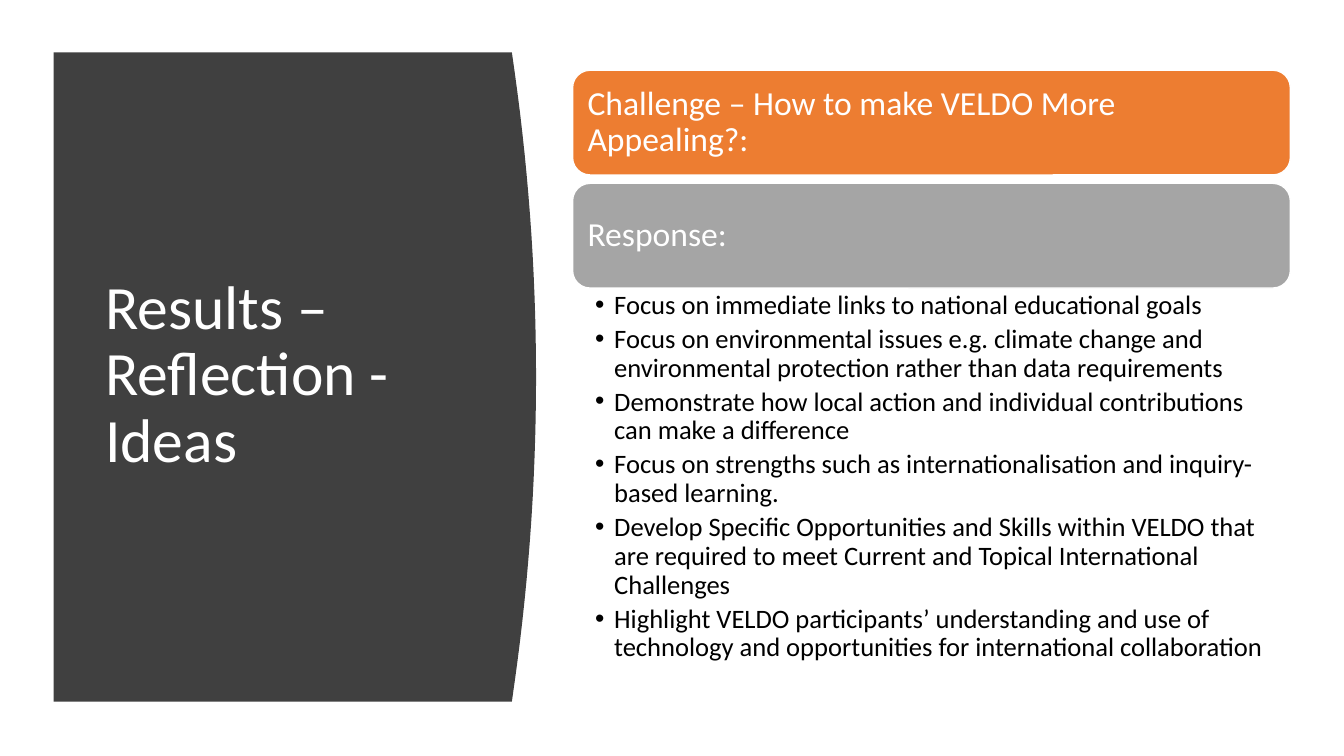
from lxml import etree
from pptx import Presentation
from pptx.dml.color import RGBColor
from pptx.enum.shapes import MSO_SHAPE
from pptx.enum.text import MSO_ANCHOR, MSO_AUTO_SIZE, PP_ALIGN
from pptx.oxml.ns import qn
from pptx.util import Cm, Pt

ROUNDED = MSO_SHAPE.ROUNDED_RECTANGLE
MIDDLE, TOP = MSO_ANCHOR.MIDDLE, MSO_ANCHOR.TOP
LEFT = PP_ALIGN.LEFT
NO_FIT = MSO_AUTO_SIZE.NONE

COLORS = {"panel": "404040", "challenge": "ED7D31", "response": "A5A5A5",
          "white": "FFFFFF", "black": "000000"}

TITLE = "Results – Reflection - Ideas"
BANNERS = [("Challenge – How to make VELDO More Appealing?:", "challenge"),
           ("Response:", "response")]
IDEAS = [
    "Focus on immediate links to national educational goals",
    "Focus on environmental issues e.g. climate change and environmental "
    "protection rather than data requirements",
    "Demonstrate how local action and individual contributions can make a difference",
    "Focus on strengths such as internationalisation and inquiry-based learning.",
    "Develop Specific Opportunities and Skills within VELDO that are required to "
    "meet Current and Topical International Challenges",
    "Highlight VELDO participants’ understanding and use of technology and "
    "opportunities for international collaboration",
]


def rgb(name):
    return RGBColor.from_string(COLORS[name])


def write(p, text, size=24, color="white", font="Calibri", after=0, bullet_indent=None):
    p.alignment = LEFT
    p.line_spacing = 0.9
    p.space_before, p.space_after = Pt(0), Pt(after)
    r = p.add_run()
    r.text = text
    r.font.name, r.font.size = font, Pt(size)
    r.font.color.rgb = rgb(color)
    if bullet_indent:
        pPr = p._p.get_or_add_pPr()
        pPr.set("marL", str(Cm(bullet_indent)))
        pPr.set("indent", str(-Cm(bullet_indent)))
        etree.SubElement(pPr, qn("a:buFont")).set("typeface", "Arial")
        etree.SubElement(pPr, qn("a:buChar")).set("char", "•")


class SlideBuilder:
    def __init__(self, prs):
        self.s = prs.slides.add_slide(prs.slide_layouts[5])

    def frame(self, sp, anchor, left, top, right, bottom):
        tf = sp.text_frame
        tf.word_wrap, tf.auto_size = True, NO_FIT
        tf.vertical_anchor = anchor
        tf.margin_left, tf.margin_top = Cm(left), Cm(top)
        tf.margin_right, tf.margin_bottom = Cm(right), Cm(bottom)
        return tf

    def curved_panel(self, x, y, w, h, bulge, color, steps=32):
        # The right side is a shallow parabola
        edge = [(Cm(x + w + bulge * (1 - (2 * i / steps - 1) ** 2)), Cm(y + h * i / steps))
                for i in range(steps + 1)]
        outline = self.s.shapes.build_freeform(Cm(x), Cm(y))
        outline.add_line_segments(edge + [(Cm(x), Cm(y + h))], close=True)
        sp = outline.convert_to_shape()
        sp.shadow.inherit = False
        sp.fill.solid()
        sp.fill.fore_color.rgb = rgb(color)
        sp.line.fill.background()
        self.s.shapes._spTree.insert(2, sp._element)  # behind the title

    def title(self, text, x, y, w, h):
        sp = self.s.shapes.title
        sp.left, sp.top, sp.width, sp.height = Cm(x), Cm(y), Cm(w), Cm(h)
        tf = self.frame(sp, MIDDLE, 0.25, 0.13, 0.25, 0.13)
        write(tf.paragraphs[0], text, size=44)

    def banner(self, text, x, y, w, h, color):
        sp = self.s.shapes.add_shape(ROUNDED, Cm(x), Cm(y), Cm(w), Cm(h))
        sp.shadow.inherit = False
        sp.fill.solid()
        sp.fill.fore_color.rgb = rgb(color)
        sp.line.color.rgb, sp.line.width = rgb("white"), Pt(1)
        tf = self.frame(sp, MIDDLE, 0.25, 0.25, 0.25, 0.25)
        write(tf.paragraphs[0], text)

    def bullets(self, items, x, y, w, h):
        sp = self.s.shapes.add_textbox(Cm(x), Cm(y), Cm(w), Cm(h))
        tf = self.frame(sp, TOP, 0.57, 0.08, 0.48, 0.08)
        for i, item in enumerate(items):
            p = tf.add_paragraph() if i else tf.paragraphs[0]
            write(p, item, size=19, color="black", after=3.8, bullet_indent=0.48)


def main():
    prs = Presentation()
    prs.slide_width, prs.slide_height = Cm(33.87), Cm(19.05)
    slide = SlideBuilder(prs)

    # Dark panel with the title
    slide.curved_panel(1.35, 1.32, 11.55, 16.36, 0.61, "panel")
    slide.title(TITLE, 2.4, 2.82, 9.5, 13.31)

    # Banners and the list of ideas share one column
    x, y, w, h, pitch = 14.43, 1.77, 18.09, 2.64, 2.85
    for i, (text, color) in enumerate(BANNERS):
        slide.banner(text, x, y + i * pitch, w, h, color)
    slide.bullets(IDEAS, x, y + pitch + h, w, 9.93)

    prs.save("out.pptx")


if __name__ == "__main__":
    main()
